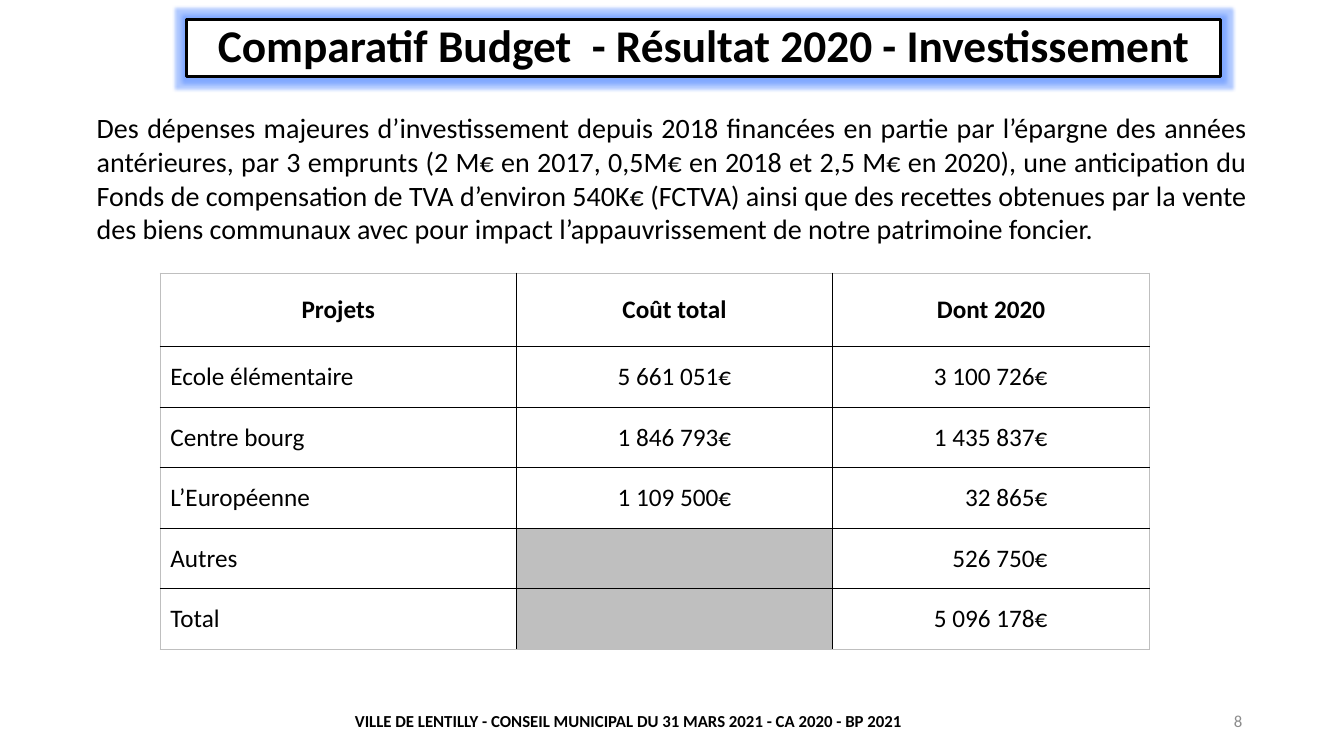
from lxml import etree
from pptx import Presentation, util as u
from pptx.dml.color import RGBColor
from pptx.enum import shapes, text
from pptx.oxml import parse_xml
from pptx.oxml.ns import nsdecls

Inches = u.Inches
ALIGN = text.PP_ALIGN


def color(value):
    return RGBColor.from_string(value)


def write(frame, wording, size, align, bold=False, ink="000000"):
    frame.word_wrap = True
    paragraph = frame.paragraphs[0]
    paragraph.alignment = align
    run = paragraph.add_run()
    run.text = wording
    formats = {"name": "Calibri", "size": u.Pt(size), "bold": bold}
    for name, value in formats.items():
        setattr(run.font, name, value)
    run.font.color.rgb = color(ink)
    return paragraph


presentation = Presentation()
presentation.slide_width = Inches(13.33)
presentation.slide_height = Inches(7.5)
slide = presentation.slides.add_slide(presentation.slide_layouts[6])

introduction = (
    "Des dépenses majeures d’investissement depuis 2018 financées en partie par "
    "l’épargne des années antérieures, par 3 emprunts (2 M€ en 2017, 0,5M€ en 2018 "
    "et 2,5 M€ en 2020), une anticipation du Fonds de compensation de TVA d’environ "
    "540K€ (FCTVA) ainsi que des recettes obtenues par la vente des biens communaux "
    "avec pour impact l’appauvrissement de notre patrimoine foncier."
)
footer = "VILLE DE LENTILLY - CONSEIL MUNICIPAL DU 31 MARS 2021 - CA 2020 - BP 2021"
middle, top = text.MSO_ANCHOR.MIDDLE, text.MSO_ANCHOR.TOP
for box, anchor, wording, size, align, bold, ink in [
    ((2.28, 6.95, 7.91, 0.4), middle, footer, 12, ALIGN.CENTER, True, "000000"),
    ((9.42, 6.95, 3, 0.4), middle, "8", 12, ALIGN.RIGHT, False, "8C8C8C"),
    ((0.86, 1.05, 11.61, 1.45), top, introduction, 20, ALIGN.JUSTIFY, False, "000000"),
]:
    shape = slide.shapes.add_textbox(*map(Inches, box))
    shape.text_frame.vertical_anchor = anchor
    write(shape.text_frame, wording, size, align, bold, ink)

title = slide.shapes.add_shape(
    shapes.MSO_SHAPE.RECTANGLE, Inches(1.85), Inches(0.19), Inches(10.26), Inches(0.57)
)
title.shadow.inherit = False
title.fill.solid()
title.fill.fore_color.rgb = color("FFFFFF")
title.line.color.rgb = color("000000")
title.line.width = u.Pt(2.25)
title.text_frame.vertical_anchor = middle
heading = write(
    title.text_frame, "Comparatif Budget  - Résultat 2020 - Investissement",
    32.4, ALIGN.CENTER, True,
)
heading.line_spacing = 0.9
effects = title._element.spPr.find("{*}effectLst")
effects.append(parse_xml(
    f'<a:glow {nsdecls("a")} rad="63500"><a:srgbClr val="3B78FF">'
    '<a:alpha val="40000"/></a:srgbClr></a:glow>'
))

rows = [
    ("Projets", "Coût total", "Dont 2020"),
    ("Ecole élémentaire", "5 661 051€", "3 100 726€"),
    ("Centre bourg", "1 846 793€", "1 435 837€"),
    ("L’Européenne", "1 109 500€", "32 865€"),
    ("Autres", "", "526 750€"),
    ("Total", "", "5 096 178€"),
]
widths = [3.53, 3.14, 3.14]
heights = [0.73] + [0.6] * 5
last_row, last_column = len(rows) - 1, len(widths) - 1
table = slide.shapes.add_table(
    len(rows), len(widths), Inches(1.59), Inches(2.71),
    Inches(sum(widths)), Inches(sum(heights)),
).table
table.horz_banding = False
for column, width in zip(table.columns, widths):
    column.width = Inches(width)
for row, height in zip(table.rows, heights):
    row.height = Inches(height)

body_align = [ALIGN.LEFT, ALIGN.CENTER, ALIGN.RIGHT]
for r, labels in enumerate(rows):
    for c, label in enumerate(labels):
        cell = table.cell(r, c)
        cell.vertical_anchor = middle
        if label:
            write(cell.text_frame, label, 18, body_align[c] if r else ALIGN.CENTER, r == 0)
        if r and c == last_column:
            cell.margin_right = Inches(1.01)
        properties = cell._tc.get_or_add_tcPr()
        outer = {"lnL": c == 0, "lnR": c == last_column, "lnT": r == 0, "lnB": r == last_row}
        for side, is_outer in outer.items():
            border = parse_xml(f'<a:{side} {nsdecls("a")} w="12700"/>')
            fill = etree.SubElement(border, border.tag.replace(side, "solidFill"))
            ink = etree.SubElement(fill, border.tag.replace(side, "srgbClr"))
            ink.set("val", "BFBFBF" if is_outer else "000000")
            properties.append(border)
        cell.fill.solid()
        cell.fill.fore_color.rgb = color("FFFFFF" if label else "BFBFBF")

presentation.save("out.pptx")
